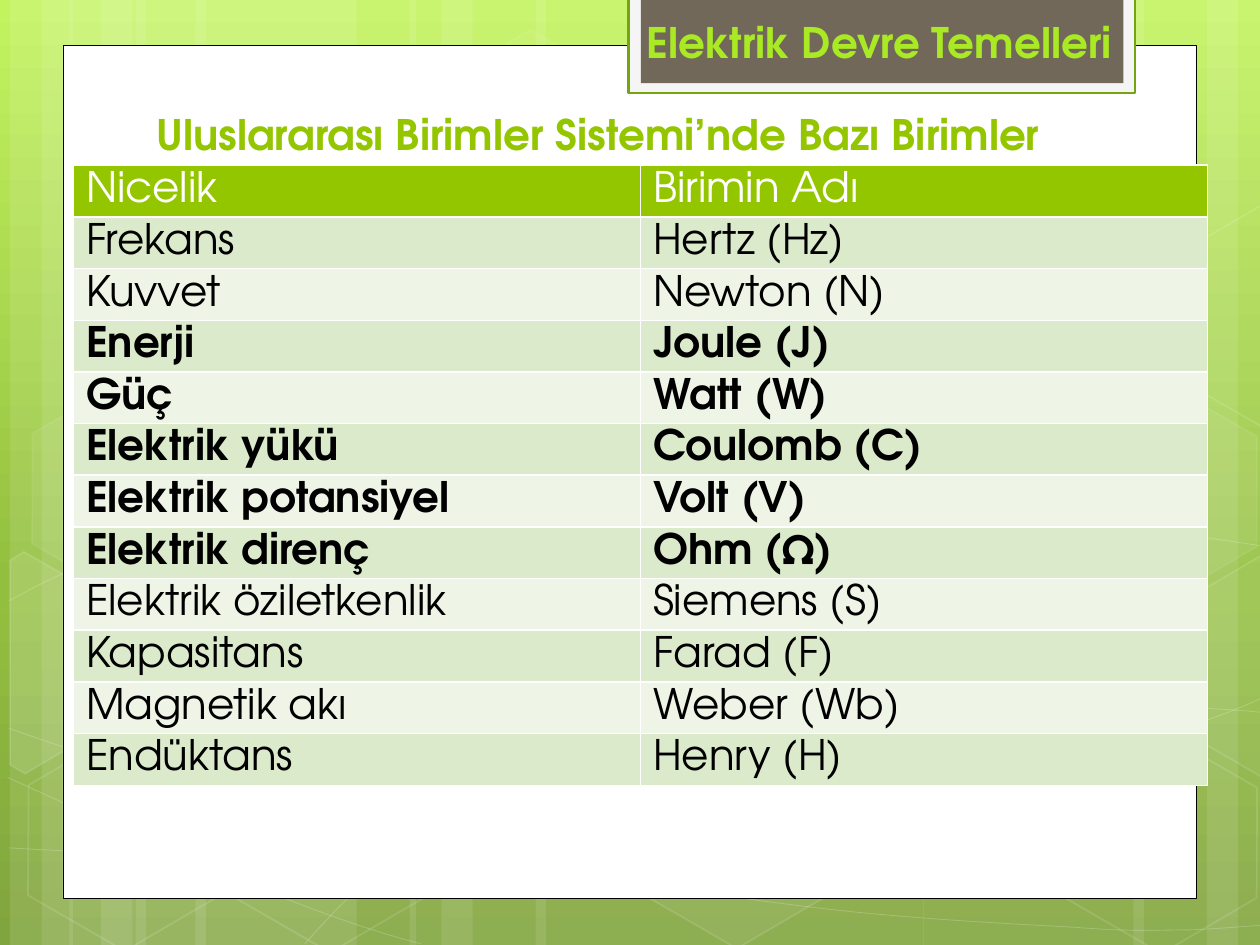
from copy import deepcopy
from typing import NamedTuple

from lxml.etree import Element, SubElement as Sub
from pptx import Presentation
from pptx.dml.color import RGBColor as RGB
from pptx.enum.shapes import MSO_SHAPE as Kind
from pptx.enum.text import MSO_ANCHOR as Anchor, MSO_AUTO_SIZE as Fit, PP_ALIGN as Align
from pptx.oxml.ns import qn
from pptx.util import Cm, Pt

WHITE, BLACK = RGB(255, 255, 255), RGB(0, 0, 0)
GREEN, LIME, EDGE = RGB(0x94, 0xC6, 0x00), RGB(0xAA, 0xEA, 0x25), RGB(0x74, 0xA5, 0x10)
PALE, BROWN = RGB(0xF5, 0xF5, 0xF5), RGB(0x71, 0x68, 0x5A)
ODD, EVEN = RGB(0xDC, 0xEA, 0xCC), RGB(0xEE, 0xF5, 0xE7)
SKY = [(0, RGB(0xC3, 0xF3, 0x5F)), (0.62, RGB(0x93, 0xBF, 0x3F)), (1, RGB(0x81, 0xA5, 0x3E))]
FONT = "TeX Gyre Adventor"
UNIT = Cm(0.0254)  # drawing unit of the outlines
HIGH = 19.05


class Band(NamedTuple):
    edge: float
    side: int  # 1 grows to the right, -1 to the left
    wide: float = 4.45


class Hexa(NamedTuple):
    left: float
    top: float
    fill: int
    line: int


class Part(NamedTuple):
    pts: list
    fill: int
    line: int


class Unit(NamedTuple):
    name: str
    sign: str
    bold: bool = False


BANDS = [Band(0.2, 1), Band(1.4, 1), Band(25.6, -1), Band(8.26, 1, 7.82)]

# Each curve is a start point followed by three points per Bezier piece
CURVES = [
    [(7, 673), (61, 676), (115, 679), (190, 678), (265, 677), (358, 675), (458, 665),
     (558, 655), (700, 636), (792, 617), (883, 598), (977, 568), (1007, 551)],
    [(7, 477), (36, 461), (65, 446), (121, 431), (178, 416), (259, 394), (347, 387),
     (436, 380), (544, 379), (654, 387), (764, 395), (947, 426), (1007, 434)],
    [(6, 617), (127, 672), (247, 727), (334, 749)],
    [(7, 578), (38, 589), (70, 600), (128, 616), (186, 631), (273, 656), (357, 673),
     (440, 690), (545, 708), (628, 718), (711, 729), (800, 733), (853, 736),
     (905, 740), (919, 738), (945, 738), (971, 737), (989, 735), (1007, 734)],
    [(242, 749), (260, 729), (278, 709), (302, 691), (326, 673), (360, 653), (388, 639),
     (416, 625), (433, 619), (470, 609), (506, 599), (573, 585), (608, 578),
     (644, 571), (649, 571), (680, 569), (711, 566), (760, 563), (794, 562),
     (829, 561), (886, 562), (886, 562), (908, 562), (931, 562), (953, 562),
     (971, 563), (988, 564), (997, 565), (1006, 566), (1003, 565), (1006, 566)],
]
HEXAS = [
    Hexa(8.48, 0.91, 4, 8), Hexa(12.62, 14.96, 6, 12), Hexa(0.28, 15.01, 0, 12),
    Hexa(0.36, 7.92, 7, 8), Hexa(4.42, 15.04, 0, 12), Hexa(19.13, 11.51, 10, 12),
    Hexa(21.18, 15.06, 0, 12), Hexa(21.18, 7.98, 7, 8),
]
PARTS = [
    Part([(8, 445), (19, 438), (96, 482), (95, 570), (20, 614), (8, 607)], 10, 12),
    Part([(926, 485), (1001, 441), (1009, 446), (1009, 613), (1002, 617), (926, 573)], 4, 12),
    Part([(926, 207), (1001, 163), (1010, 168), (1009, 335), (1002, 339), (926, 295)], 0, 12),
]
UNITS = [
    Unit("Nicelik", "Birimin Adı"),
    Unit("Frekans", "Hertz (Hz)"),
    Unit("Kuvvet", "Newton (N)"),
    Unit("Enerji", "Joule (J)", True),
    Unit("Güç", "Watt (W)", True),
    Unit("Elektrik yükü", "Coulomb (C)", True),
    Unit("Elektrik potansiyel", "Volt (V)", True),
    Unit("Elektrik direnç", "Ohm (Ω)", True),
    Unit("Elektrik öziletkenlik", "Siemens (S)"),
    Unit("Kapasitans", "Farad (F)"),
    Unit("Magnetik akı", "Weber (Wb)"),
    Unit("Endüktans", "Henry (H)"),
]


def fade(fill, alpha: int) -> None:
    """Fill with white, or not at all when alpha is 0."""
    if not alpha:
        fill.background()
        return
    fill.solid()
    fill.fore_color.rgb = WHITE


def veil(shape, fill: int, line: int, width: float) -> None:
    shape.shadow.inherit = False
    fade(shape.fill, fill)
    fade(shape.line.fill, line)
    if line:
        shape.line.width = Pt(width)
    # Fill colour comes before line colour in the shape's XML
    for clr, alpha in zip(shape.element.spPr.iter(qn("a:srgbClr")), filter(None, (fill, line))):
        Sub(clr, qn("a:alpha"), val=str(alpha * 1000))


def box(shapes, left: float, top: float, wide: float, high: float, kind=Kind.RECTANGLE):
    return shapes.add_shape(kind, Cm(left), Cm(top), Cm(wide), Cm(high))


def panel(shapes, place: tuple, color: RGB, edge=None, width: float = 0) -> None:
    shape = box(shapes, *place)
    shape.shadow.inherit = False
    shape.fill.solid()
    shape.fill.fore_color.rgb = color
    if edge is None:
        shape.line.fill.background()
    else:
        shape.line.color.rgb = edge
        shape.line.width = Pt(width)


def band(shapes, item: Band) -> None:
    for gap, wide in ((2.54, item.wide), (0, 1.27), (0.64, 2.11)):
        left = item.edge + gap if item.side > 0 else item.edge - gap - wide
        veil(box(shapes, left, 0, wide, HIGH), 10, 0, 0)


def trace(shapes, pts: list, close: bool):
    pen = shapes.build_freeform(*pts[0], scale=UNIT)
    pen.add_line_segments(pts[1:], close=close)
    return pen.convert_to_shape()


def curve(shapes, pts: list):
    """Trace the end points, then turn each line into a Bezier piece."""
    ends = pts[::3]
    shape = trace(shapes, ends, False)
    left, top = (min(axis) for axis in zip(*ends))
    for i, step in enumerate(list(shape.element.iter(qn("a:lnTo")))):
        step.tag = qn("a:cubicBezTo")
        for k, (x, y) in enumerate(pts[3 * i + 1:3 * i + 3]):
            step.insert(k, Element(qn("a:pt"), x=str(x - left), y=str(y - top)))
    return shape


def write(frame, text: str, color: RGB, bold: bool) -> None:
    par = frame.paragraphs[0]
    par.alignment = Align.LEFT
    run = par.add_run()
    run.text = text
    font = run.font
    font.name, font.size, font.bold = FONT, Pt(24), bold
    font.color.rgb = color


def border(cell) -> None:
    props = cell._tc.get_or_add_tcPr()
    for i, side in enumerate(("lnL", "lnR", "lnT", "lnB")):
        line = Sub(props, qn("a:" + side), w=str(Pt(1)))
        Sub(Sub(line, qn("a:solidFill")), qn("a:srgbClr"), val=str(WHITE))
        props.insert(i, line)


def chart(shapes) -> None:
    high = Cm(1.04)
    grid = shapes.add_table(len(UNITS), 2, Cm(1.48), Cm(3.33), Cm(22.86), high * len(UNITS)).table
    for i, unit in enumerate(UNITS):
        grid.rows[i].height = high
        for j, text in enumerate((unit.name, unit.sign)):
            cell = grid.cell(i, j)
            cell.fill.solid()
            cell.fill.fore_color.rgb = (ODD if i % 2 else EVEN) if i else GREEN
            border(cell)
            write(cell.text_frame, text, BLACK if i else WHITE, unit.bold)


def main() -> None:
    deck = Presentation()
    deck.slide_width, deck.slide_height = Cm(25.4), Cm(HIGH)
    slide = deck.slides.add_slide(deck.slide_layouts[5])
    shapes = slide.shapes

    # Background gradient
    fill = slide.background.fill
    fill.gradient()
    fill.gradient_angle = 270
    stops = slide.element.find(".//" + qn("a:gsLst"))
    stops.append(deepcopy(stops[-1]))
    for stop, (pos, color) in zip(fill.gradient_stops, SKY):
        stop.position, stop.color.rgb = pos, color

    # Bands, curves and hexagons
    for item in BANDS:
        band(shapes, item)
    for pts in CURVES:
        veil(curve(shapes, pts), 0, 20, 0.5)
    for item in HEXAS:
        shape = box(shapes, item.left, item.top, 4.45, 3.86, Kind.HEXAGON)
        shape.adjustments[0] = 0.285
        shape.rotation = 30
        veil(shape, item.fill, item.line, 1)
    for part in PARTS:
        veil(trace(shapes, part.pts, True), part.fill, part.line, 1)

    # Page and header tab
    panel(shapes, (1.27, 0.91, 22.86, 17.2), WHITE, BLACK, 0.5)
    panel(shapes, (12.67, -0.05, 10.21, 1.93), PALE, EDGE, 1.25)
    panel(shapes, (12.92, -0.05, 9.73, 1.73), BROWN)
    frame = shapes.add_textbox(Cm(12.78), Cm(0.2), Cm(10.06), Cm(1.27)).text_frame
    frame.word_wrap, frame.auto_size = False, Fit.SHAPE_TO_FIT_TEXT
    write(frame, "Elektrik Devre Temelleri", LIME, True)

    # Title, brought in front of the page
    title = shapes.title
    title.left, title.top, title.width, title.height = Cm(2.9), Cm(1.22), Cm(19.51), Cm(2.11)
    title.text_frame.vertical_anchor = Anchor.BOTTOM
    write(title.text_frame, "Uluslararası Birimler Sistemi’nde Bazı Birimler", GREEN, True)
    title.element.getparent().append(title.element)

    chart(shapes)
    deck.save("out.pptx")


if __name__ == "__main__":
    main()
